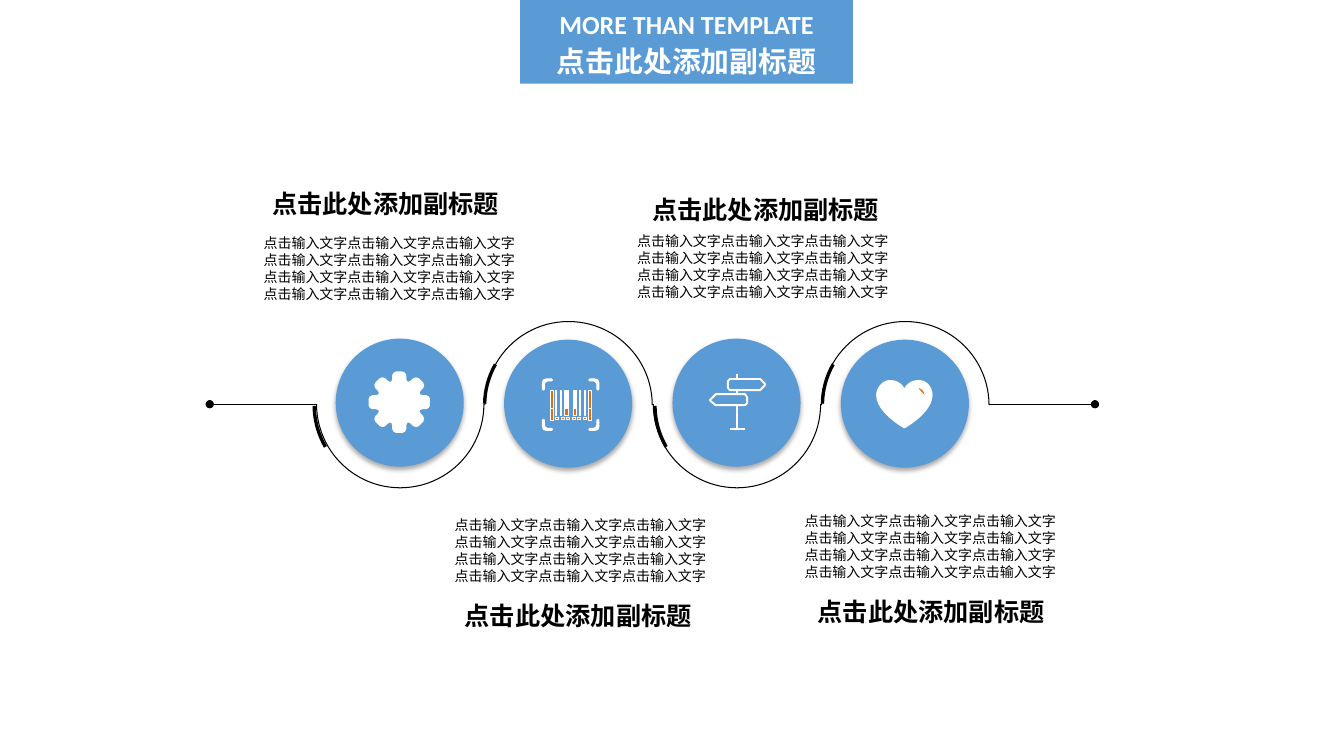
from math import cos, pi, radians, sin

from lxml import etree
from pptx import Presentation
from pptx.dml.color import RGBColor
from pptx.enum.shapes import MSO_CONNECTOR, MSO_SHAPE
from pptx.enum.text import MSO_ANCHOR, MSO_AUTO_SIZE, PP_ALIGN
from pptx.oxml.ns import qn
from pptx.util import Inches, Pt

BLUE = RGBColor(0x5B, 0x9B, 0xD5)
ORANGE = RGBColor(0xE4, 0x6C, 0x0A)
BLACK = RGBColor(0, 0, 0)
WHITE = RGBColor(0xFF, 0xFF, 0xFF)
RECTANGLE, OVAL, ARC = MSO_SHAPE.RECTANGLE, MSO_SHAPE.OVAL, MSO_SHAPE.BLOCK_ARC
STRAIGHT = MSO_CONNECTOR.STRAIGHT
CENTER, MIDDLE = PP_ALIGN.CENTER, MSO_ANCHOR.MIDDLE
GROW, FIXED = MSO_AUTO_SIZE.SHAPE_TO_FIT_TEXT, MSO_AUTO_SIZE.NONE
CJK = "Noto Sans CJK SC"
THIN, ICON = 0.75, 1.38
STEP = 1.67
CAPTION = "点击此处添加副标题"
BODY = "点击输入文字" * 12


def write(para, text, size=10, font=CJK, color=BLACK, bold=False, spacing=1.1):
    para.alignment = CENTER
    para.line_spacing = spacing
    span = para.add_run()
    span.text = text
    span.font.size = Pt(size)
    span.font.name = font
    span.font.bold = bold
    span.font.color.rgb = color
    east = etree.SubElement(span.font._element, qn("a:ea"))
    east.set("typeface", font)


def bezier(start, *curves):
    points = [start]
    for first, second, end in curves:
        origin = points[-1]
        for step in range(1, 13):
            t = step / 12
            weights = ((1 - t) ** 3, 3 * t * (1 - t) ** 2, 3 * t * t * (1 - t), t ** 3)
            corners = (origin, first, second, end)
            points.append(tuple(sum(w * c[axis] for w, c in zip(weights, corners))
                                for axis in (0, 1)))
    return points


class Slide:
    def __init__(self, page):
        self.page = page

    def paint(self, shape, fill, line, width):
        shape.shadow.inherit = False
        if fill is None:
            shape.fill.background()
        else:
            shape.fill.solid()
            shape.fill.fore_color.rgb = fill
        if line is None:
            shape.line.fill.background()
        else:
            shape.line.color.rgb = line
            shape.line.width = Pt(width)
        return shape

    def shape(self, kind, left, top, width, height, fill, line=None, weight=THIN):
        box = self.page.shapes.add_shape(kind, *map(Inches, (left, top, width, height)))
        return self.paint(box, fill, line, weight)

    def outline(self, points, fill=None, line=WHITE, weight=ICON, close=True):
        corners = [(Inches(x), Inches(y)) for x, y in points]
        builder = self.page.shapes.build_freeform(*corners[0])
        builder.add_line_segments(corners[1:], close=close)
        return self.paint(builder.convert_to_shape(), fill, line, weight)

    def line(self, x1, y1, x2, y2, color=WHITE, weight=ICON, dot=False):
        line = self.page.shapes.add_connector(STRAIGHT, *map(Inches, (x1, y1, x2, y2)))
        line.line.color.rgb = color
        line.line.width = Pt(weight)
        if dot:
            etree.SubElement(line.line._get_or_add_ln(), qn("a:tailEnd")).set("type", "oval")
        etree.SubElement(line._element.spPr, qn("a:effectLst"))

    def disc(self, left, top):
        disc = self.shape(OVAL, left, top, 1.27, 1.27, BLUE)
        effects = disc._element.spPr.find(qn("a:effectLst"))
        shadow = etree.SubElement(effects, qn("a:outerShdw"), blurRad=str(Pt(3.5)),
                                  dist=str(Pt(2.2)), dir="5400000", rotWithShape="0")
        color = etree.SubElement(shadow, qn("a:srgbClr"), val="000000")
        etree.SubElement(color, qn("a:alpha"), val="32000")

    def text(self, left, top, width, height, text, wrap=True, **style):
        box = self.page.shapes.add_textbox(*map(Inches, (left, top, width, height)))
        box.text_frame.word_wrap = wrap
        box.text_frame.auto_size = GROW
        write(box.text_frame.paragraphs[0], text, **style)

    def banner(self):
        title = self.page.shapes.title
        title.left, title.top, title.width, title.height = map(Inches, (5.16, 0, 3.3, 0.83))
        title.fill.solid()
        title.fill.fore_color.rgb = BLUE
        frame = title.text_frame
        frame.auto_size = FIXED
        frame.vertical_anchor = MIDDLE
        write(frame.paragraphs[0], "MORE THAN TEMPLATE", size=18.6, font="Calibri",
              color=WHITE, bold=True)
        write(frame.add_paragraph(), CAPTION, size=20.6, color=WHITE, bold=True)

    def track(self):
        for index, accent in enumerate((3.1, 4.79, 6.48, 8.14)):
            upper = index % 2
            side = -1 if upper else 1
            center = 3.97 + STEP * index
            angles = [pi * step / 48 for step in range(49)]
            self.outline([(center + 0.83 * cos(a), 4.01 + 0.01 * upper + side * 0.83 * sin(a))
                          for a in angles], line=BLACK, weight=THIN, close=False)
            mark = self.shape(ARC, accent, 3.18, 1.68, 1.68, BLACK)
            mark.rotation = 0 if upper else 330
            for slot, value in enumerate((108.6 if upper else 107.9, 125.7, 0.02)):
                mark.adjustments[slot] = value
        for inner, outer in ((9.81, 10.86), (3.14, 2.08)):
            self.line(inner, 4.01, outer, 4.01, BLACK, THIN, dot=True)

    def gear(self):
        half = [(0.03, 0.295), (0.05, 0.285), (0.06, 0.265), (0.06, 0.23), (0.07, 0.2)]
        tooth = [(-x, y) for x, y in reversed(half)] + half
        turns = [radians(45 * index) for index in range(8)]
        self.outline([(3.96 + x * cos(a) + y * sin(a), 3.99 + x * sin(a) - y * cos(a))
                      for a in turns for x, y in tooth], WHITE)
        self.shape(OVAL, 3.89, 3.92, 0.13, 0.13, WHITE, WHITE, ICON)

    def barcode(self):
        bars = ((5.46, 0.03), (5.51, 0.01), (5.56, 0.01), (5.6, 0.04),
                (5.69, 0.03), (5.75, 0.01), (5.8, 0.01), (5.84, 0.03))
        for index, (left, width) in enumerate(bars):
            upper = WHITE if index in (3, 4) else ORANGE
            lower = 0.12 if index in (0, 7) else 0.07
            self.shape(RECTANGLE, left, 3.87, width, 0.18, upper, WHITE)
            self.shape(RECTANGLE, left, 4.05, width, lower, ORANGE, WHITE)
        for index in range(6):
            self.shape(RECTANGLE, 5.51 + 0.055 * index, 4.14, 0.03, 0.02, ORANGE, WHITE)
        bracket = ((0.28, 0.155), (0.27, 0.145), (0.26, 0.155), (0.26, 0.205), (0.25, 0.225),
                   (0.23, 0.235), (0.19, 0.235), (0.18, 0.245), (0.19, 0.255), (0.24, 0.255),
                   (0.27, 0.245), (0.28, 0.215))
        for across in (-1, 1):
            for down in (-1, 1):
                self.outline([(5.66 + across * x, 4.015 + down * y) for x, y in bracket],
                             WHITE, weight=THIN)

    def signpost(self):
        self.outline([(7.24, 3.87), (7.22, 3.85), (7.22, 3.78), (7.24, 3.76), (7.54, 3.76),
                      (7.58, 3.8), (7.59, 3.815), (7.58, 3.83), (7.54, 3.87)])
        self.outline([(7.39, 3.91), (7.41, 3.94), (7.41, 4), (7.39, 4.02), (7.1, 4.02),
                      (7.06, 3.99), (7.04, 3.97), (7.06, 3.95), (7.1, 3.91)])
        for top, bottom in ((4.02, 4.25), (3.87, 3.91), (3.71, 3.76)):
            self.line(7.31, top, 7.31, bottom)
        self.line(7.24, 4.26, 7.39, 4.26)

    def heart(self):
        self.outline(bezier((8.7, 3.92),
                            ((8.7, 4.09), (8.97, 4.24), (8.97, 4.24)),
                            ((8.97, 4.24), (9.24, 4.09), (9.24, 3.92)),
                            ((9.24, 3.85), (9.19, 3.78), (9.11, 3.78)),
                            ((9.04, 3.78), (8.97, 3.83), (8.97, 3.9)),
                            ((8.97, 3.83), (8.9, 3.78), (8.83, 3.78)),
                            ((8.76, 3.78), (8.7, 3.85), (8.7, 3.92))), WHITE)
        self.outline(bezier((9.18, 3.93), ((9.18, 3.88), (9.15, 3.84), (9.1, 3.84))),
                     ORANGE, close=False)


def main():
    deck = Presentation()
    deck.slide_width, deck.slide_height = Inches(13.33), Inches(7.5)
    slide = Slide(deck.slides.add_slide(deck.slide_layouts[5]))
    slide.banner()
    slide.track()
    for index, icon in enumerate((slide.gear, slide.barcode, slide.signpost, slide.heart)):
        slide.disc(3.33 + STEP * index, 3.36 + 0.01 * (index % 2))
        icon()
    for left, top, width in ((2.49, 2.28, 2.74), (4.4, 5.08, 2.71),
                             (6.2, 2.26, 2.73), (7.87, 5.04, 2.71)):
        slide.text(left, top, width, 0.77, BODY, spacing=Pt(12))
    for left, top in ((2.59, 1.79), (6.36, 1.85), (4.5, 5.88), (8, 5.84)):
        slide.text(left, top, 2.47, 0.41, CAPTION, wrap=False, size=18, bold=True)
    deck.save("out.pptx")


if __name__ == "__main__":
    main()
